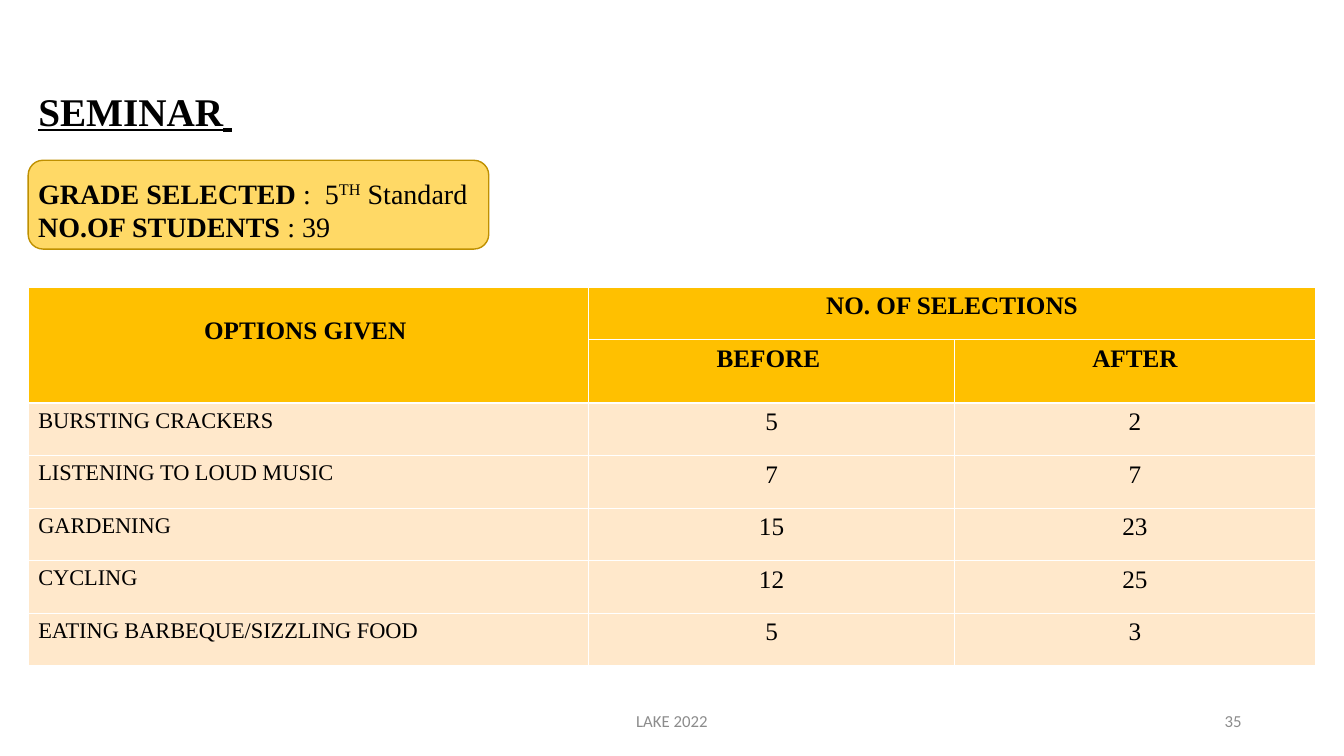
from lxml import etree
from pptx import Presentation
from pptx.dml.color import RGBColor
from pptx.enum.shapes import MSO_SHAPE
from pptx.enum.text import MSO_ANCHOR, PP_ALIGN
from pptx.oxml.ns import qn
from pptx.util import Pt

LEFT, CENTER, RIGHT = PP_ALIGN.LEFT, PP_ALIGN.CENTER, PP_ALIGN.RIGHT
MIDDLE = MSO_ANCHOR.MIDDLE
ROUNDED = MSO_SHAPE.ROUNDED_RECTANGLE
SERIF, SANS = "Times New Roman", "Calibri"
BLACK, WHITE, GREY = "000000", "FFFFFF", "8C8C8C"
AMBER, CREAM = "FFC000", "FFE8CB"
MARGIN = 20.16
ROW_HEIGHT, SUBHEAD_HEIGHT = 37.6, 45

SELECTIONS = [
    ("BURSTING CRACKERS", 5, 2),
    ("LISTENING TO LOUD MUSIC", 7, 7),
    ("GARDENING", 15, 23),
    ("CYCLING", 12, 25),
    ("EATING BARBEQUE/SIZZLING FOOD", 5, 3),
]


def color(hex_code):
    return RGBColor.from_string(hex_code)


def set_font(font, size, name=SERIF, hex_code=BLACK, bold=False):
    font.size, font.name, font.bold = Pt(size), name, bold
    font.color.rgb = color(hex_code)


def add_title(slide):
    title = slide.shapes.title
    title.left, title.top = Pt(MARGIN), Pt(28.8)
    title.width, title.height = Pt(828), Pt(104.4)
    title.text_frame.vertical_anchor = MIDDLE
    heading = title.text_frame.paragraphs[0]
    heading.alignment, heading.line_spacing = LEFT, 0.9
    for text, font_name in (("SEMINAR", SERIF), (" ", SANS)):
        run = heading.add_run()
        run.text = text
        set_font(run.font, 28, font_name, bold=True)
        run.font.underline = True


def add_panel(slide):
    panel = slide.shapes.add_shape(ROUNDED, Pt(MARGIN), Pt(114.5), Pt(329), Pt(63.4))
    panel.shadow.inherit = False
    panel.fill.solid()
    panel.fill.fore_color.rgb = color("FFD966")
    panel.line.color.rgb = color("BF9000")
    panel.line.width = Pt(1)


def add_textbox(slide, left, top, width, height):
    frame = slide.shapes.add_textbox(Pt(left), Pt(top), Pt(width), Pt(height)).text_frame
    frame.word_wrap = True
    return frame


def add_class_details(slide):
    details = add_textbox(slide, MARGIN, 122.4, 371.5, 55.4).paragraphs[0]
    set_font(details.font, 20)

    def add_part(text, bold=False):
        run = details.add_run()
        run.text = text
        run.font.bold = bold
        return run

    add_part("GRADE SELECTED ", bold=True)
    add_part(":  5")
    ordinal = add_part("TH")
    ordinal.font._element.set("baseline", "30000")
    add_part(" Standard")
    details.add_line_break()
    add_part("NO.OF STUDENTS ", bold=True)
    add_part(": 39")
    # Runs carry the size and typeface, as their weights differ
    for run in details.runs:
        set_font(run.font, 20, bold=run.font.bold)


def add_footer(slide, text, left, width, alignment):
    frame = add_textbox(slide, left, 500.5, width, 28.75)
    frame.vertical_anchor = MIDDLE
    line = frame.paragraphs[0]
    line.text, line.alignment = text, alignment
    set_font(line.font, 12, SANS, GREY)


def add_borders(cell):
    properties = cell._tc.get_or_add_tcPr()
    for position, side in enumerate(("a:lnL", "a:lnR", "a:lnT", "a:lnB")):
        border = etree.Element(qn(side), w=str(Pt(1)))
        fill = etree.SubElement(border, qn("a:solidFill"))
        etree.SubElement(fill, qn("a:srgbClr"), val=WHITE)
        properties.insert(position, border)


def fill_cell(cell, text, fill, size=18, alignment=CENTER, bold=False):
    line = cell.text_frame.paragraphs[0]
    line.text, line.alignment = str(text), alignment
    set_font(line.font, size, bold=bold)
    cell.fill.solid()
    cell.fill.fore_color.rgb = color(fill)


def add_selection_table(slide):
    widths = (400.3, 261.4, 257.8)
    row_count = len(SELECTIONS) + 2
    table = slide.shapes.add_table(
        row_count, len(widths), Pt(MARGIN), Pt(205.2), Pt(sum(widths)),
        Pt(ROW_HEIGHT * (row_count - 1) + SUBHEAD_HEIGHT)).table
    table.first_row = table.horz_banding = False
    for column, width in zip(table.columns, widths):
        column.width = Pt(width)
    for row in table.rows:
        row.height = Pt(ROW_HEIGHT)
    table.rows[1].height = Pt(SUBHEAD_HEIGHT)
    for cell in table.iter_cells():
        add_borders(cell)

    # Two-level header
    options = table.cell(0, 0)
    options.merge(table.cell(1, 0))
    table.cell(0, 1).merge(table.cell(0, 2))
    headers = {(0, 0): "OPTIONS GIVEN ", (0, 1): "NO. OF SELECTIONS",
               (1, 1): "BEFORE ", (1, 2): "AFTER"}
    for position, header in headers.items():
        fill_cell(table.cell(*position), header, AMBER, bold=True)
    options.margin_top = Pt(21.5)

    # One row per option
    for row, (option, before, after) in enumerate(SELECTIONS, start=2):
        fill_cell(table.cell(row, 0), option, CREAM, 16, LEFT)
        fill_cell(table.cell(row, 1), before, CREAM)
        fill_cell(table.cell(row, 2), after, CREAM)


def main():
    presentation = Presentation()
    presentation.slide_width, presentation.slide_height = Pt(960), Pt(540)
    slide = presentation.slides.add_slide(presentation.slide_layouts[5])
    add_panel(slide)
    add_title(slide)
    add_selection_table(slide)
    add_class_details(slide)
    add_footer(slide, "LAKE 2022", 318, 324, CENTER)
    add_footer(slide, "35", 678, 216, RIGHT)
    presentation.save("out.pptx")


if __name__ == "__main__":
    main()
